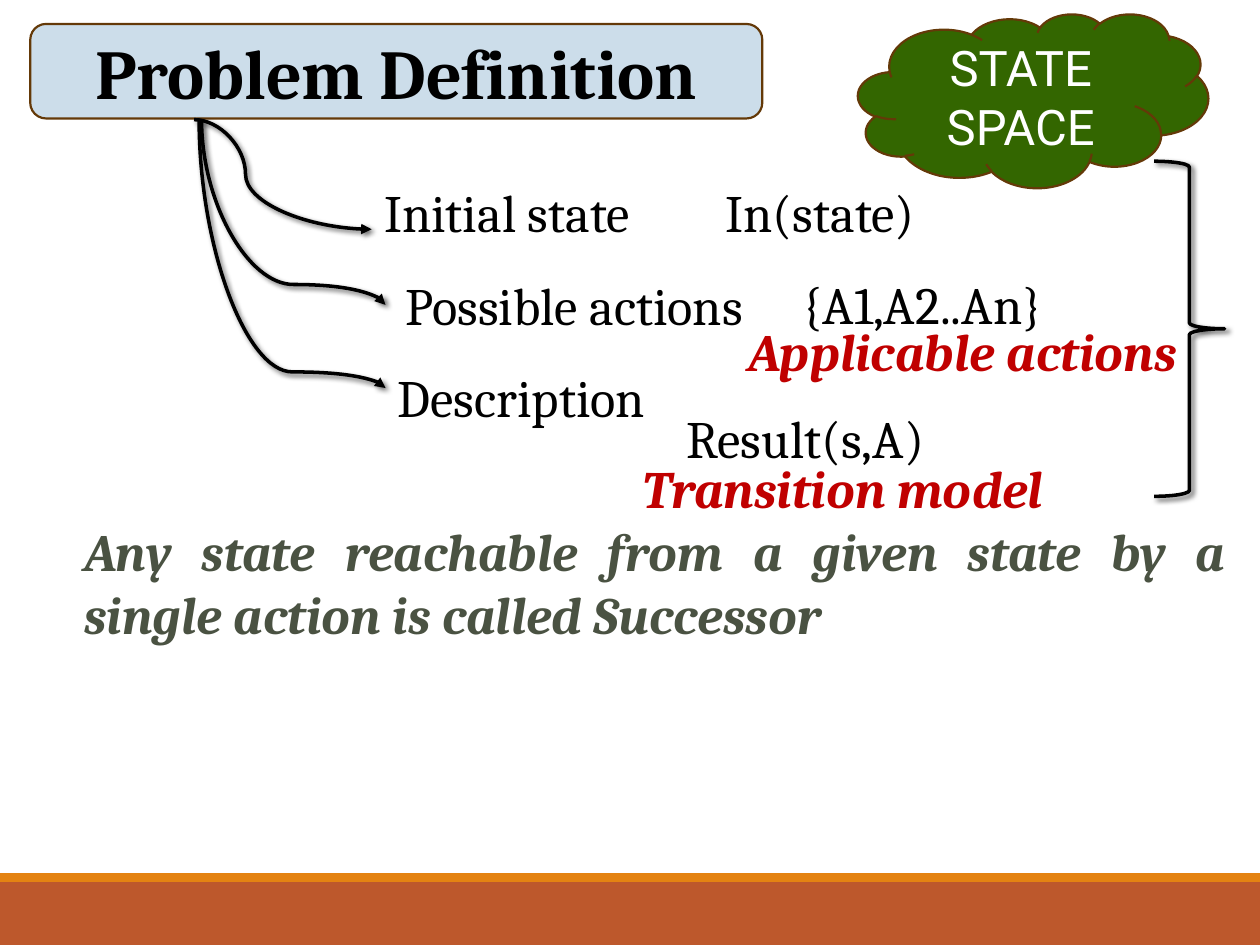
from lxml import etree
from pptx import Presentation
from pptx import util as u
from pptx.dml.color import RGBColor
from pptx.enum import shapes, text
from pptx.oxml.ns import qn

COLORS = {
    "black": "000000", "white": "FFFFFF", "red": "C00000", "olive": "4A5242",
    "title": "CCDDEA", "cloud": "336600", "outline": "643908",
    "footer": "BD582C", "stripe": "E48312",
}
SHAPE = shapes.MSO_SHAPE


def color(name):
    return RGBColor.from_string(COLORS[name])


def inches(*values):
    return [u.Inches(value) for value in values]


def add_run(frame, words, size, font, fill, emphasis=False, italic=False, align=None):
    paragraph = frame.paragraphs[0]
    paragraph.alignment = align
    run = paragraph.add_run()
    run.text = words
    run.font.size = u.Pt(size)
    run.font.name = font
    run.font.bold = emphasis
    run.font.italic = italic
    run.font.color.rgb = color(fill)


def add_shape(slide, kind, box, fill=None, line=None, width=1.25):
    shape = slide.shapes.add_shape(kind, *inches(*box))
    shape.shadow.inherit = False
    if fill:
        shape.fill.solid()
        shape.fill.fore_color.rgb = color(fill)
    else:
        shape.fill.background()
    if line:
        shape.line.color.rgb = color(line)
        shape.line.width = u.Pt(width)
    else:
        shape.line.fill.background()
    return shape


def add_shadow(shape):
    properties = shape.element.spPr
    for effects in properties.findall(qn("a:effectLst")):
        properties.remove(effects)
    effects = etree.SubElement(properties, qn("a:effectLst"))
    shadow = etree.SubElement(effects, qn("a:outerShdw"), blurRad=str(u.Pt(3)),
                              dist=str(u.Pt(2)), dir="2700000", rotWithShape="0")
    shade = etree.SubElement(shadow, qn("a:srgbClr"), val=COLORS["black"])
    etree.SubElement(shade, qn("a:alpha"), val="60000")


def add_label(slide, box, words, fill="black", strong=False, wrap=True, align=None):
    label = slide.shapes.add_textbox(*inches(*box))
    label.text_frame.word_wrap = wrap
    label.text_frame.auto_size = text.MSO_AUTO_SIZE.SHAPE_TO_FIT_TEXT
    add_run(label.text_frame, words, 30, "Cambria", fill, strong, strong, align)


def add_curved_arrow(slide, start, end, bend, downward):
    """Curve from start to end, leaving sideways or downward; bend is a share of the way."""
    (x1, y1), (x2, y2) = start, end
    width, height = x2 - x1, y2 - y1
    if downward:  # the turned box keeps its centre, with its sides swapped
        left, top = (x1 + x2 - height) / 2, (y1 + y2 - width) / 2
        width, height = height, width
    else:
        left, top = x1, y1
    arrow = slide.shapes.add_connector(
        shapes.MSO_CONNECTOR.CURVE, *inches(left, top, left + width, top + height))
    properties = arrow.element.spPr
    if downward:
        frame = properties.find(qn("a:xfrm"))
        frame.set("rot", str(270 * 60000))
        frame.set("flipH", "1")
    adjustments = properties.find(qn("a:prstGeom")).get_or_add_avLst()
    etree.SubElement(adjustments, qn("a:gd"), name="adj1", fmla=f"val {round(bend * 100000)}")
    arrow.line.color.rgb = color("black")
    arrow.line.width = u.Pt(2)
    etree.SubElement(properties.find(qn("a:ln")), qn("a:tailEnd"), type="triangle")
    add_shadow(arrow)


def build_footer(slide, left, top, width, height):
    stripe = 0.07
    add_shape(slide, SHAPE.RECTANGLE, (left, top + stripe, width, height - stripe), "footer")
    add_shape(slide, SHAPE.RECTANGLE, (left, top, width, stripe), "stripe")


def build_title(slide, *box):
    title = add_shape(slide, SHAPE.ROUNDED_RECTANGLE, box, "title", "outline")
    add_run(title.text_frame, "Problem Definition", 40, "Cambria", "black", True,
            align=text.PP_ALIGN.CENTER)


def build_components(slide, left, top):
    """Curved arrows from the title to the parts of a problem."""
    arrows = [  # start x, end x, end y, bend, leaves downward
        (0, 1.41, 0.87, 0.29, False),
        (0.06, 1.52, 1.47, 0.89, True),
        (0.04, 1.52, 2.13, 0.94, True),
    ]
    for x1, x2, y2, bend, downward in arrows:
        add_curved_arrow(slide, (left + x1, top), (left + x2, top + y2), bend, downward)

    row_top, row_gap, height = top + 0.43, 0.735, 0.61
    names = [(1.41, "Initial state"), (1.58, "Possible actions"), (1.52, "Description")]
    for row, (x, words) in enumerate(names):
        add_label(slide, (left + x, row_top + row * row_gap, 3.26, height), words)

    notations = [(4.12, 0.43, "In(state)"), (4.73, 1.16, "{A1,A2..An}"),
                 (3.81, 2.22, "Result(s,A)")]
    for x, y, words in notations:
        add_label(slide, (left + x, top + y, 2.59, height), words)

    terms = [(4.3, 1.53, 3.71, "Applicable actions"), (3.46, 2.62, 3.44, "Transition model")]
    for x, y, width, words in terms:
        add_label(slide, (left + x, top + y, width, height), words, "red", True, wrap=False)


def build_state_space(slide, left, top):
    """Brace around the components, and the cloud that names them."""
    brace = add_shape(slide, SHAPE.RIGHT_BRACE, (left + 2.35, top + 1.17, 0.56, 2.66),
                      line="black", width=2)
    add_shadow(brace)
    cloud = add_shape(slide, SHAPE.CLOUD, (left, top, 2.78, 1.38), "cloud", "outline")
    cloud.text_frame.word_wrap = True
    add_run(cloud.text_frame, "STATE SPACE", 28, "Roboto", "white",
            align=text.PP_ALIGN.CENTER)


def main():
    presentation = Presentation()
    presentation.slide_width, presentation.slide_height = inches(10, 7.5)
    slide = presentation.slides.add_slide(presentation.slide_layouts[6])
    build_footer(slide, 0, 6.93, 10, 0.57)
    build_title(slide, 0.24, 0.19, 5.81, 0.75)
    build_components(slide, 1.54, 0.95)
    # Definition of a successor
    add_label(slide, (0.57, 4.07, 9.26, 1.11),
              "Any state reachable from a given state by a single action is called Successor",
              "olive", True, align=text.PP_ALIGN.JUSTIFY)
    build_state_space(slide, 6.81, 0.11)
    presentation.save("out.pptx")


if __name__ == "__main__":
    main()
